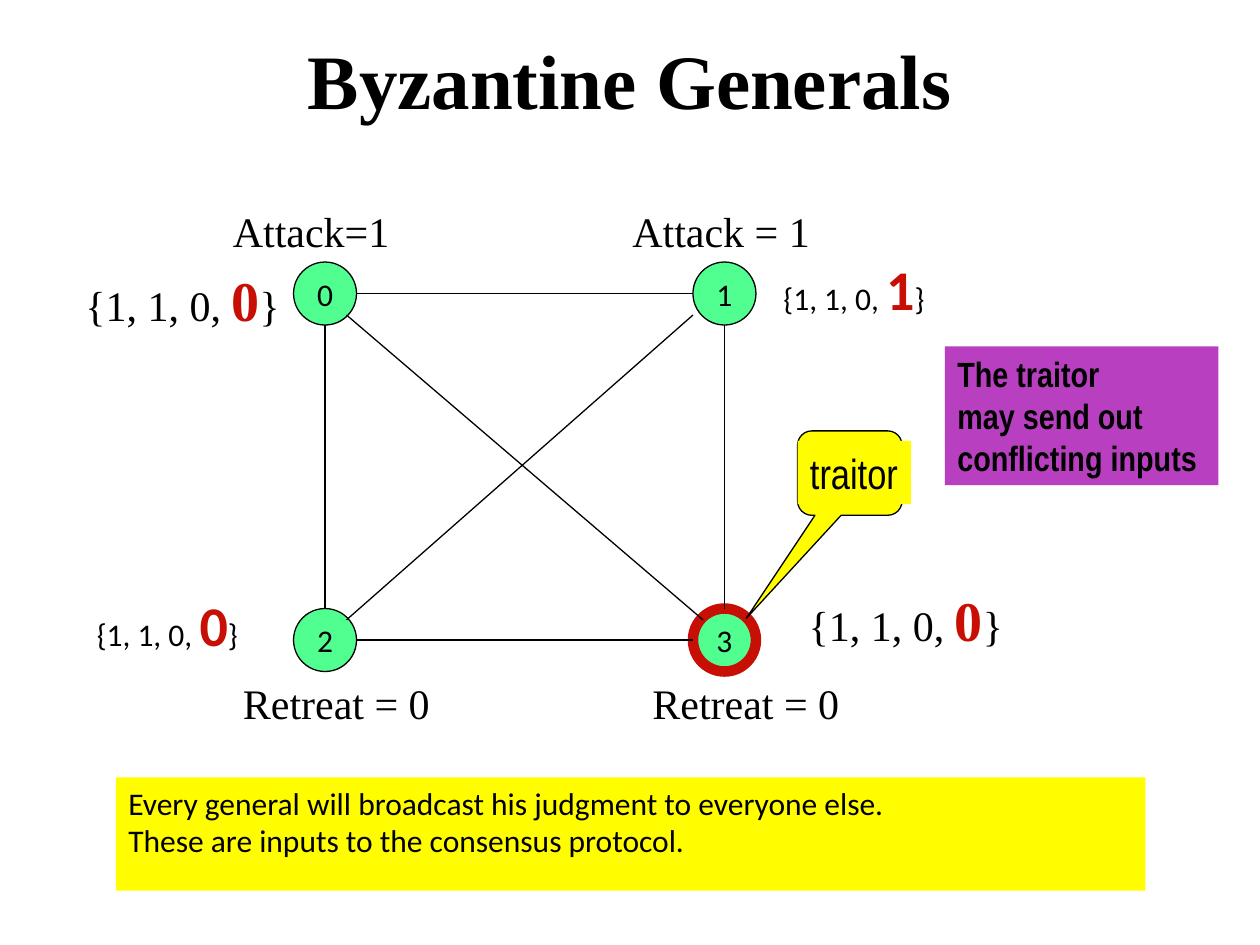
from pptx import Presentation
from pptx.dml.color import RGBColor
from pptx.enum import shapes, text
from pptx.oxml.ns import qn
from pptx.util import Inches, Pt
from lxml import etree

THEME = {
    "ink": "000000", "node": "51FF91", "alert": "C70F05",
    "note": "FFFD00", "warning": "B840C0",
    "serif": "Times New Roman", "sans": "Calibri", "narrow": "Arial Narrow",
    "title": 44, "vote": 32, "label": 24, "callout": 20, "body": 18,
    "thin": 0.75, "thick": 6,
}

TITLE = "Byzantine Generals"
NODE_SIZE = 0.5
LEFT, RIGHT, TOP, BOTTOM = 2.33, 5.5, 2.08, 4.83
GENERALS = [("0", LEFT, TOP), ("1", RIGHT, TOP), ("2", LEFT, BOTTOM), ("3", RIGHT, BOTTOM)]
TRAITOR = "3"
DIAGONALS = [((5.5, 2.5), (2.75, 4.92)), ((2.75, 2.5), (5.58, 4.92))]

# wording, (left, top, width, height)
ORDERS = [
    ("Attack=1", (1.75, 1.58, 1.44, 0.5)),
    ("Attack = 1", (4.92, 1.58, 1.61, 0.5)),
    ("Retreat = 0", (1.83, 5.33, 1.69, 0.5)),
    ("Retreat = 0", (5.08, 5.33, 1.69, 0.5)),
]
# vote received from the traitor, left, top, font, size
VECTORS = [
    ("0", 0.58, 2.06, "serif", "label"),
    ("1", 6.12, 1.97, "sans", "body"),
    ("0", 0.67, 4.64, "sans", "body"),
    ("0", 6.32, 4.6, "serif", "label"),
]
BROADCAST = ["Every general will broadcast his judgment to everyone else.",
             "These are inputs to the consensus protocol."]
WARNING = ["The traitor", "may send out conflicting inputs"]


def color(name):
    return RGBColor.from_string(THEME[name])


def style(font, face, size, ink="ink", bold=False):
    font.name, font.size, font.bold = THEME[face], Pt(THEME[size]), bold
    font.color.rgb = color(ink)


def add_shape(page, kind, place, fill, line=None, width="thin"):
    shape = page.shapes.add_shape(kind, *map(Inches, place))
    shape.shadow.inherit = False
    shape.fill.solid()
    shape.fill.fore_color.rgb = color(fill)
    if line:
        shape.line.color.rgb = color(line)
        shape.line.width = Pt(THEME[width])
    else:
        shape.line.fill.background()
    return shape


def write(shape, lines, face, size, bold=False, wrap=False, grow=True,
          align=text.PP_ALIGN.LEFT, anchor=text.MSO_ANCHOR.TOP):
    frame = shape.text_frame
    frame.word_wrap = wrap
    frame.auto_size = (text.MSO_AUTO_SIZE.SHAPE_TO_FIT_TEXT if grow
                       else text.MSO_AUTO_SIZE.NONE)
    frame.vertical_anchor = anchor
    frame.text = "\n".join(lines)
    for para in frame.paragraphs:
        para.alignment = align
        style(para.font, face, size, bold=bold)


def add_label(page, place, lines, face, size, **options):
    box = page.shapes.add_textbox(*map(Inches, place))
    write(box, lines, face, size, **options)
    return box


def add_link(page, start, end):
    link = page.shapes.add_connector(shapes.MSO_CONNECTOR.STRAIGHT,
                                     *map(Inches, (*start, *end)))
    link.line.color.rgb = color("ink")
    link.line.width = Pt(THEME["thin"])
    etree.SubElement(link._element.spPr, qn("a:effectLst"))


def add_network(page):
    centred = {"align": text.PP_ALIGN.CENTER, "anchor": text.MSO_ANCHOR.MIDDLE}
    for name, left, top in GENERALS:
        outline = ("alert", "thick") if name == TRAITOR else ("ink", "thin")
        node = add_shape(page, shapes.MSO_SHAPE.OVAL,
                         (left, top, NODE_SIZE, NODE_SIZE), "node", *outline)
        write(node, [name], "sans", "body", grow=False, **centred)

    half = NODE_SIZE / 2
    for top in (TOP, BOTTOM):
        add_link(page, (LEFT + NODE_SIZE, top + half), (RIGHT, top + half))
    for left in (LEFT, RIGHT):
        add_link(page, (left + half, TOP + NODE_SIZE), (left + half, BOTTOM))
    for start, end in DIAGONALS:
        add_link(page, start, end)


def add_vector(page, vote, left, top, face, size):
    """Write the received inputs with the traitor's vote enlarged in red."""
    box = add_label(page, (left, top, 1.74, 0.63), [""], face, size)
    para = box.text_frame.paragraphs[0]
    for words, look in [("{1, 1, 0, ", (size,)), (vote, ("vote", "alert", True)),
                        ("}", (size,))]:
        span = para.add_run()
        span.text = words
        style(span.font, face, *look)


def add_notes(page):
    rectangle = shapes.MSO_SHAPE.RECTANGLE
    broadcast = add_shape(page, rectangle, (0.92, 6.17, 8.17, 0.9), "note")
    write(broadcast, BROADCAST, "sans", "body")

    bubble = add_shape(page, shapes.MSO_SHAPE.ROUNDED_RECTANGULAR_CALLOUT,
                       (6.33, 3.42, 0.83, 0.67), "note", "ink")
    for index, value in enumerate((-0.99, 1.72, 0.17)):
        bubble.adjustments[index] = value
    tag = add_shape(page, rectangle, (6.33, 3.5, 0.9, 0.5), "note")
    write(tag, ["traitor"], "narrow", "label")

    warning = add_shape(page, rectangle, (7.5, 2.75, 2.17, 1.1), "warning")
    write(warning, WARNING, "narrow", "callout", bold=True, wrap=True)


def main():
    deck = Presentation()
    deck.slide_width, deck.slide_height = Inches(10), Inches(7.5)
    page = deck.slides.add_slide(deck.slide_layouts[6])
    add_label(page, (0.75, 0, 8.5, 1.25), [TITLE], "serif", "title", bold=True,
              wrap=True, grow=False, align=text.PP_ALIGN.CENTER,
              anchor=text.MSO_ANCHOR.MIDDLE)
    add_network(page)
    for words, place in ORDERS:
        add_label(page, place, [words], "serif", "label")
    for vector in VECTORS:
        add_vector(page, *vector)
    add_notes(page)
    deck.save("out.pptx")


if __name__ == "__main__":
    main()
